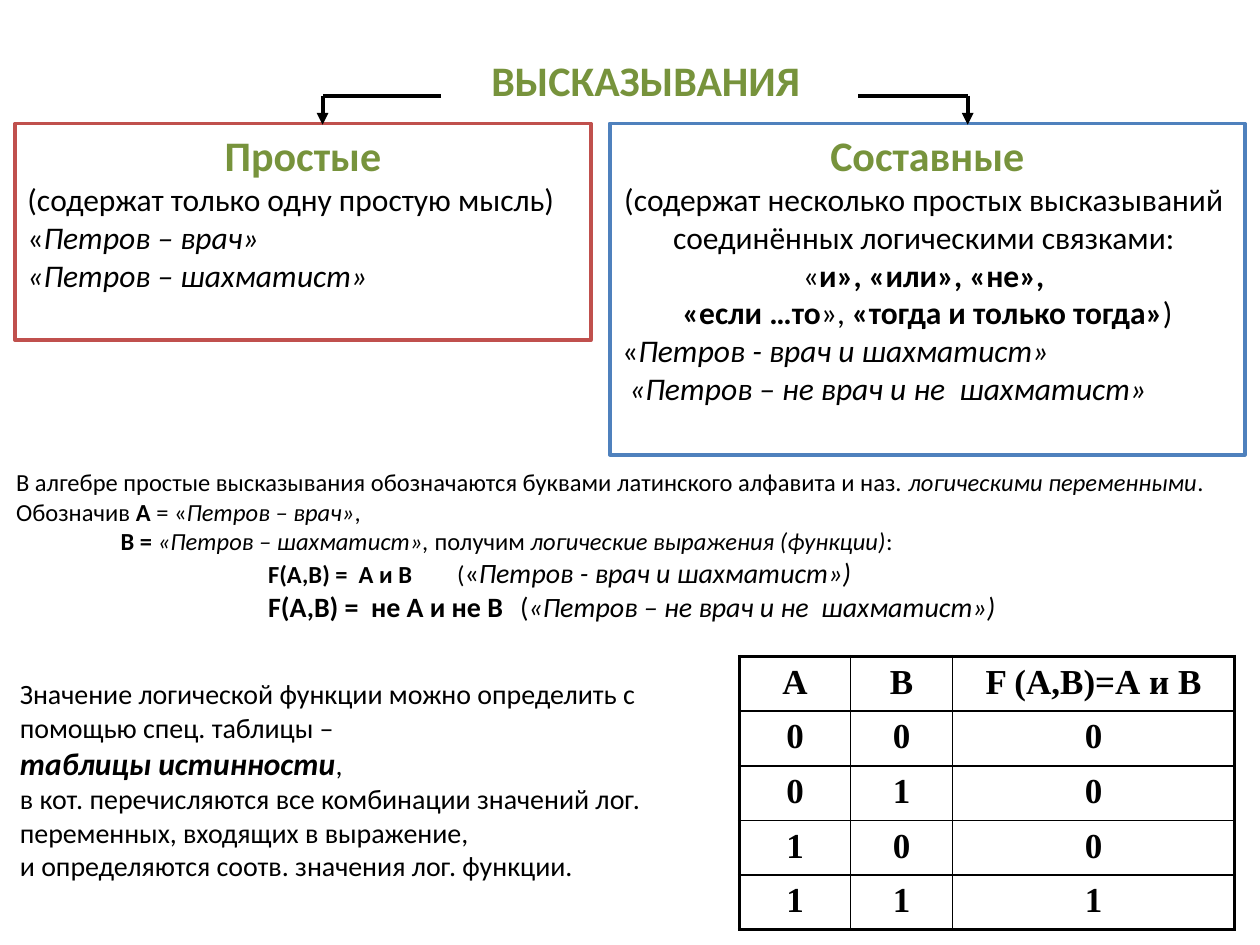
"""Builds a slide on simple and compound statements with a truth table."""
from lxml import etree
from pptx import Presentation
from pptx.dml.color import RGBColor
from pptx.enum.shapes import MSO_CONNECTOR, MSO_SHAPE
from pptx.enum.text import MSO_ANCHOR, MSO_AUTO_SIZE, PP_ALIGN
from pptx.oxml.ns import qn
from pptx.util import Inches, Pt

BLACK = RGBColor(0x00, 0x00, 0x00)
WHITE = RGBColor(0xFF, 0xFF, 0xFF)
GREEN = RGBColor(0x77, 0x93, 0x3C)
RED = RGBColor(0xC0, 0x50, 0x4D)
BLUE = RGBColor(0x4F, 0x81, 0xBD)

LEFT, CENTER = PP_ALIGN.LEFT, PP_ALIGN.CENTER
TOP, MIDDLE = MSO_ANCHOR.TOP, MSO_ANCHOR.MIDDLE
NO_AUTOFIT = MSO_AUTO_SIZE.NONE
RECTANGLE = MSO_SHAPE.RECTANGLE
STRAIGHT = MSO_CONNECTOR.STRAIGHT

COLUMNS, ROWS = 100, 75
THIN, THICK = 1, 2.25
BOLD, ITALIC = {"bold": True}, {"italic": True}

SIMPLE = [
    ({"align": CENTER}, [("Простые", {"size": 24, "bold": True, "color": GREEN})]),
    ({}, [("(содержат только одну простую мысль)", {})]),
    ({}, [("«", {}), ("Петров – врач»", ITALIC)]),
    ({}, [("«Петров – шахматист»", ITALIC)]),
]
COMPOUND = [
    ({"align": CENTER}, [("Составные", {"size": 24, "bold": True, "color": GREEN})]),
    ({"align": CENTER}, [
        ("(содержат несколько простых высказываний \n"
         "соединённых логическими связками: \n«", {}),
        ("и», «или», «не», \n«если …то", BOLD), ("»,", {}),
        (" «тогда и только тогда»", BOLD), (")", {})]),
    ({}, [("«", {}), ("Петров - врач и шахматист»\n «Петров – не врач и не  шахматист»", ITALIC)]),
]
NOTATION = [
    ({}, [("В алгебре простые высказывания обозначаются буквами латинского алфавита и наз. ", {}),
          ("логическими переменными", ITALIC), (".", {})]),
    ({}, [("Обозначив ", {}), ("А ", BOLD), ("= «", {}), ("Петров – врач»", ITALIC), (",", {})]),
    ({"indent": 8.3}, [
        ("В = ", BOLD), ("«Петров – шахматист», ", ITALIC), ("получим ", {}),
        ("логические выражения (функции)", ITALIC), (":", {})]),
    ({"indent": 20, "tab": 33.1}, [
        ("F(A,B) =  А и В", BOLD), ("\t(", {}), ("«", {"size": 16}),
        ("Петров - врач и шахматист»)", {"size": 16, "italic": True})]),
    ({"indent": 20, "tab": 40.6}, [
        ("F(A,B) =  не А и не В", {"size": 16, "bold": True}), ("\t(", {"size": 16}),
        ("«Петров – не врач и не  шахматист»)", {"size": 16, "italic": True})]),
]
EXPLANATION = [
    ({}, [("Значение логической функции можно определить с помощью спец. таблицы –", {})]),
    ({}, [("таблицы истинности", {"size": 18, "bold": True, "italic": True}),
          (",\nв кот. перечисляются все комбинации значений лог. переменных, "
           "входящих в выражение, \nи определяются соотв. значения лог. функции.", {})]),
]
TRUTH_TABLE = [("А", "В", "F (А,В)=А и В"), *((a, b, a & b) for a in (0, 1) for b in (0, 1))]


def grid(*units):
    """Turn grid units, a hundredth of the slide's width each, into lengths."""
    return [Inches(unit * 10 / COLUMNS) for unit in units]


def add_text(para, text, size=18, bold=False, italic=False, color=BLACK, font="Calibri"):
    """Add formatted text to a paragraph, with a line break at each newline."""
    for number, line in enumerate(text.split("\n")):
        if number:
            para.add_line_break()
        span = para.add_run()
        span.text = line
        span.font.size, span.font.name = Pt(size), font
        span.font.bold, span.font.italic = bold, italic
        span.font.color.rgb = color


def format_paragraph(para, align=LEFT, indent=0, tab=None):
    """Set the alignment, the left indent and a tab stop of a paragraph."""
    para.alignment = align
    properties = para._p.get_or_add_pPr()
    properties.set("marL", str(grid(indent)[0]))
    properties.set("indent", "0")
    if tab:
        stops = etree.SubElement(properties, qn("a:tabLst"))
        etree.SubElement(stops, qn("a:tab"), pos=str(grid(tab)[0]), algn="l")


def fill_frame(frame, paragraphs, size):
    """Write paragraphs of formatted runs from the top of a text frame."""
    frame.word_wrap, frame.vertical_anchor = True, TOP
    for number, (layout, spans) in enumerate(paragraphs):
        para = frame.add_paragraph() if number else frame.paragraphs[0]
        format_paragraph(para, **layout)
        for text, style in spans:
            add_text(para, text, **{"size": size, **style})


def set_title(page, text, place):
    """Move and format the title placeholder."""
    title = page.shapes.title
    title.left, title.top, title.width, title.height = grid(*place)
    title.text_frame.auto_size = NO_AUTOFIT
    title.text_frame.vertical_anchor = MIDDLE
    para = title.text_frame.paragraphs[0]
    para.alignment = CENTER
    add_text(para, text, size=24, bold=True, color=GREEN)


def add_panel(page, place, color, paragraphs):
    """Add a white outlined rectangle with text."""
    panel = page.shapes.add_shape(RECTANGLE, *grid(*place))
    panel.shadow.inherit = False
    panel.fill.solid()
    panel.fill.fore_color.rgb = WHITE
    panel.line.color.rgb, panel.line.width = color, Pt(2)
    fill_frame(panel.text_frame, paragraphs, 18)


def add_note(page, place, paragraphs, size):
    """Add a text box."""
    box = page.shapes.add_textbox(*grid(*place))
    fill_frame(box.text_frame, paragraphs, size)


def add_line(page, start, end, arrow=False):
    """Add a straight black line, with an arrowhead on request."""
    line = page.shapes.add_connector(STRAIGHT, *grid(*start, *end))
    line.line.color.rgb, line.line.width = BLACK, Pt(THICK)
    if arrow:
        etree.SubElement(line.line._get_or_add_ln(), qn("a:tailEnd"), type="triangle")
    etree.SubElement(line._element.spPr, qn("a:effectLst"))


def add_branch(page, start, turn, top, bottom):
    """Add a line that leaves sideways and then an arrow that points down."""
    add_line(page, (start, top), (turn, top))
    add_line(page, (turn, top), (turn, bottom), arrow=True)


def set_borders(cell, **widths):
    """Give a cell black borders of the given widths by side."""
    properties = cell._tc.get_or_add_tcPr()
    for side, width in widths.items():
        border = etree.SubElement(properties, qn(f"a:ln{side}"), w=str(Pt(width)))
        fill = etree.SubElement(border, qn("a:solidFill"))
        etree.SubElement(fill, qn("a:srgbClr"), val=str(BLACK))


def add_truth_table(page, left, top, widths, row_height):
    """Add the truth table with a thick frame and thin inner lines."""
    last_row, last_column = len(TRUTH_TABLE) - 1, len(widths) - 1
    place = grid(left, top, sum(widths), row_height * len(TRUTH_TABLE))
    table = page.shapes.add_table(len(TRUTH_TABLE), len(widths), *place).table
    table.first_row = table.horz_banding = False
    for column, width in zip(table.columns, grid(*widths)):
        column.width = width
    for row, values in enumerate(TRUTH_TABLE):
        for column, value in enumerate(values):
            cell = table.cell(row, column)
            set_borders(cell,
                        L=THIN if column else THICK,
                        R=THICK if column == last_column else THIN,
                        T=THIN if row else THICK,
                        B=THICK if row == last_row else THIN)
            cell.fill.background()
            para = cell.text_frame.paragraphs[0]
            para.alignment = CENTER
            add_text(para, str(value), size=20, bold=True, font="Times New Roman")


def main():
    """Build and save the slide."""
    deck = Presentation()
    deck.slide_width, deck.slide_height = grid(COLUMNS, ROWS)
    page = deck.slides.add_slide(deck.slide_layouts.get_by_name("Title Only"))
    set_title(page, "ВЫСКАЗЫВАНИЯ", (34.3, 3.8, 33.9, 5))
    add_panel(page, (1.2, 9.8, 45.7, 17.2), RED, SIMPLE)
    add_panel(page, (48.4, 9.8, 50.4, 26.3), BLUE, COMPOUND)
    add_note(page, (0.3, 36.6, 99.7, 15.8), NOTATION, 14)
    add_note(page, (0.6, 53.2, 58.3, 19), EXPLANATION, 16)
    add_truth_table(page, 58.7, 52.1, (8.8, 8.1, 22.4), 4.34)
    for start, turn in ((35, 25.6), (68.1, 76.8)):
        add_branch(page, start, turn, 7.6, 9.9)
    deck.save("out.pptx")


if __name__ == "__main__":
    main()
